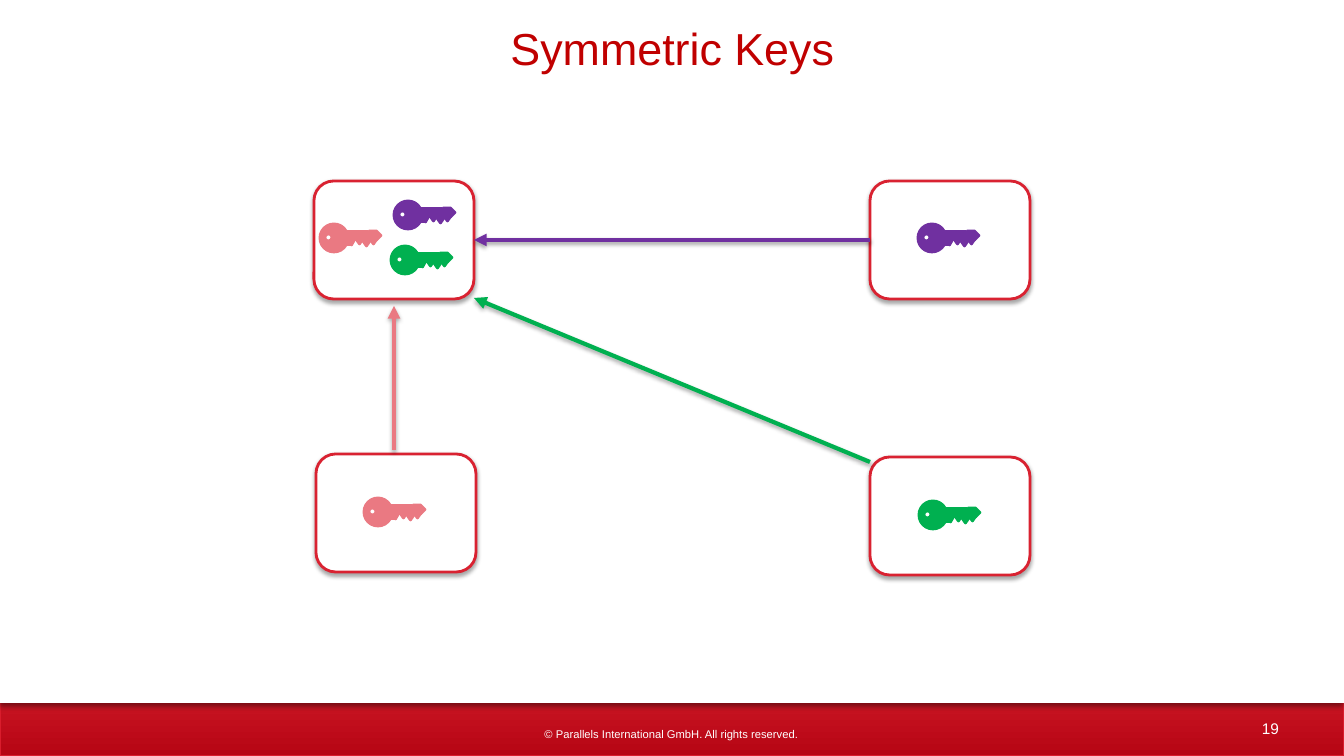
from lxml.etree import SubElement
from pptx import Presentation
from pptx.dml.color import RGBColor
from pptx.enum.shapes import MSO_CONNECTOR as CONN, MSO_SHAPE as SHAPE
from pptx.enum.text import MSO_ANCHOR as ANCHOR, PP_ALIGN as ALIGN
from pptx.oxml.ns import qn
from pptx.util import Emu, Pt

PX = 914400 / 100.8
WHITE = RGBColor(0xFF, 0xFF, 0xFF)
TITLE_RED = RGBColor(0xC0, 0x00, 0x00)
BOX_RED = RGBColor(0xD9, 0x22, 0x31)
BAR_RED = RGBColor(0xB6, 0x05, 0x13)
BAR_EDGE = RGBColor(0xD9, 0x1D, 0x2C)
PURPLE = RGBColor(0x70, 0x30, 0xA0)
GREEN = RGBColor(0x00, 0xB0, 0x50)
PINK = RGBColor(0xEA, 0x79, 0x82)

SOFT = (35, 3, 1.8)
DEEP = (40, 4, 3)

KEY_PARTS = [
    (SHAPE.OVAL, 0, 0, 28, 28),
    (SHAPE.RECTANGLE, 18, 7, 30, 9),
    (SHAPE.PENTAGON, 49, 7, 12, 9),
    (SHAPE.FLOWCHART_MERGE, 50, 15, 7, 5),
    (SHAPE.FLOWCHART_MERGE, 43, 17, 7, 5),
    (SHAPE.FLOWCHART_MERGE, 36, 15, 7, 5),
    (SHAPE.FLOWCHART_MERGE, 27, 13, 9, 8),
    (SHAPE.RECTANGLE, 18, 15, 13, 6),
]
KEY_HOLE = (SHAPE.OVAL, 5, 10, 7, 7)


def px(*lengths):
    return [Emu(round(n * PX)) for n in lengths]


class Deck:
    font = "Arial"

    def __init__(self, width, height):
        self.prs = Presentation()
        self.prs.slide_width, self.prs.slide_height = px(width, height)
        self.s = self.prs.slides.add_slide(self.prs.slide_layouts[6])

    def shadow(self, sp, opacity, blur, dist):
        spPr = sp._element.spPr
        effects = spPr.find(qn("a:effectLst"))
        if effects is None:
            effects = SubElement(spPr, qn("a:effectLst"))
        outer = SubElement(effects, qn("a:outerShdw"), blurRad=str(Pt(blur)),
                           dist=str(Pt(dist)), dir="5400000", rotWithShape="0")
        color = SubElement(outer, qn("a:srgbClr"), val="000000")
        SubElement(color, qn("a:alpha"), val=str(opacity * 1000))

    def shape(self, kind, x, y, w, h, fill, line=None, weight=2, shadow=None, shapes=None):
        sp = (shapes or self.s.shapes).add_shape(kind, *px(x, y, w, h))
        sp.shadow.inherit = False
        sp.fill.solid()
        sp.fill.fore_color.rgb = fill
        if line is None:
            sp.line.fill.background()
        else:
            sp.line.color.rgb = line
            sp.line.width = Pt(weight)
        if shadow:
            self.shadow(sp, *shadow)
        return sp

    def bar(self, x, y, w, h):
        sp = self.shape(SHAPE.RECTANGLE, x, y, w, h, BAR_RED, BAR_EDGE, 0.75, SOFT)
        sp.fill.gradient()
        sp.fill.gradient_angle = 90
        for stop, position, color in zip(sp.fill.gradient_stops, (0, 0.8), (BAR_RED, BOX_RED)):
            stop.position = position
            stop.color.rgb = color

    def box(self, x, y):
        return self.shape(SHAPE.ROUNDED_RECTANGLE, x, y, 160, 118, WHITE, BOX_RED, shadow=SOFT)

    def key(self, x, y, color):
        shapes = self.s.shapes.add_group_shape().shapes
        for kind, dx, dy, w, h in KEY_PARTS:
            self.shape(kind, x + dx, y + dy, w, h, color, color, shapes=shapes)
        kind, dx, dy, w, h = KEY_HOLE
        self.shape(kind, x + dx, y + dy, w, h, WHITE, color, shapes=shapes)

    def arrow(self, x1, y1, x2, y2, color):
        c = self.s.shapes.add_connector(CONN.STRAIGHT, *px(x1, y1, x2, y2))
        c.line.color.rgb = color
        c.line.width = Pt(3)
        SubElement(c.line._get_or_add_ln(), qn("a:tailEnd"), type="triangle")
        self.shadow(c, *SOFT)
        return c

    def text(self, x, y, w, h, text, size, color):
        tf = self.s.shapes.add_textbox(*px(x, y, w, h)).text_frame
        tf.word_wrap = True
        tf.vertical_anchor = ANCHOR.MIDDLE
        tf.margin_left = tf.margin_right = tf.margin_top = tf.margin_bottom = 0
        p = tf.paragraphs[0]
        p.text = text
        p.alignment = ALIGN.CENTER
        p.font.name = self.font
        p.font.size = Pt(size)
        p.font.color.rgb = color


def main():
    deck = Deck(1344, 756)
    deck.bar(0, 630, 1344, 126)
    deck.shape(SHAPE.RECTANGLE, 0, 0, 1344, 703, WHITE, shadow=DEEP)
    deck.text(1243, 713, 55, 31, "19", 11, WHITE)
    deck.text(516, 728, 311, 13, "© Parallels International GmbH. All rights reserved.", 8, WHITE)
    deck.text(201, 20, 943, 55, "Symmetric Keys", 32, TITLE_RED)

    hub = deck.box(314, 181)
    purple_box = deck.box(870, 181)
    deck.box(316, 454)
    deck.box(870, 457)

    link = deck.arrow(870, 240, 474, 240, PURPLE)
    link.begin_connect(purple_box, 1)
    link.end_connect(hub, 3)
    deck.arrow(394, 450, 394, 306, PINK)
    deck.arrow(870, 462, 474, 298, GREEN)

    for x, y, color in [
        (394, 201, PURPLE), (918, 224, PURPLE),
        (391, 246, GREEN), (919, 501, GREEN),
        (320, 224, PINK), (364, 498, PINK),
    ]:
        deck.key(x, y, color)

    deck.prs.save("out.pptx")


if __name__ == "__main__":
    main()
